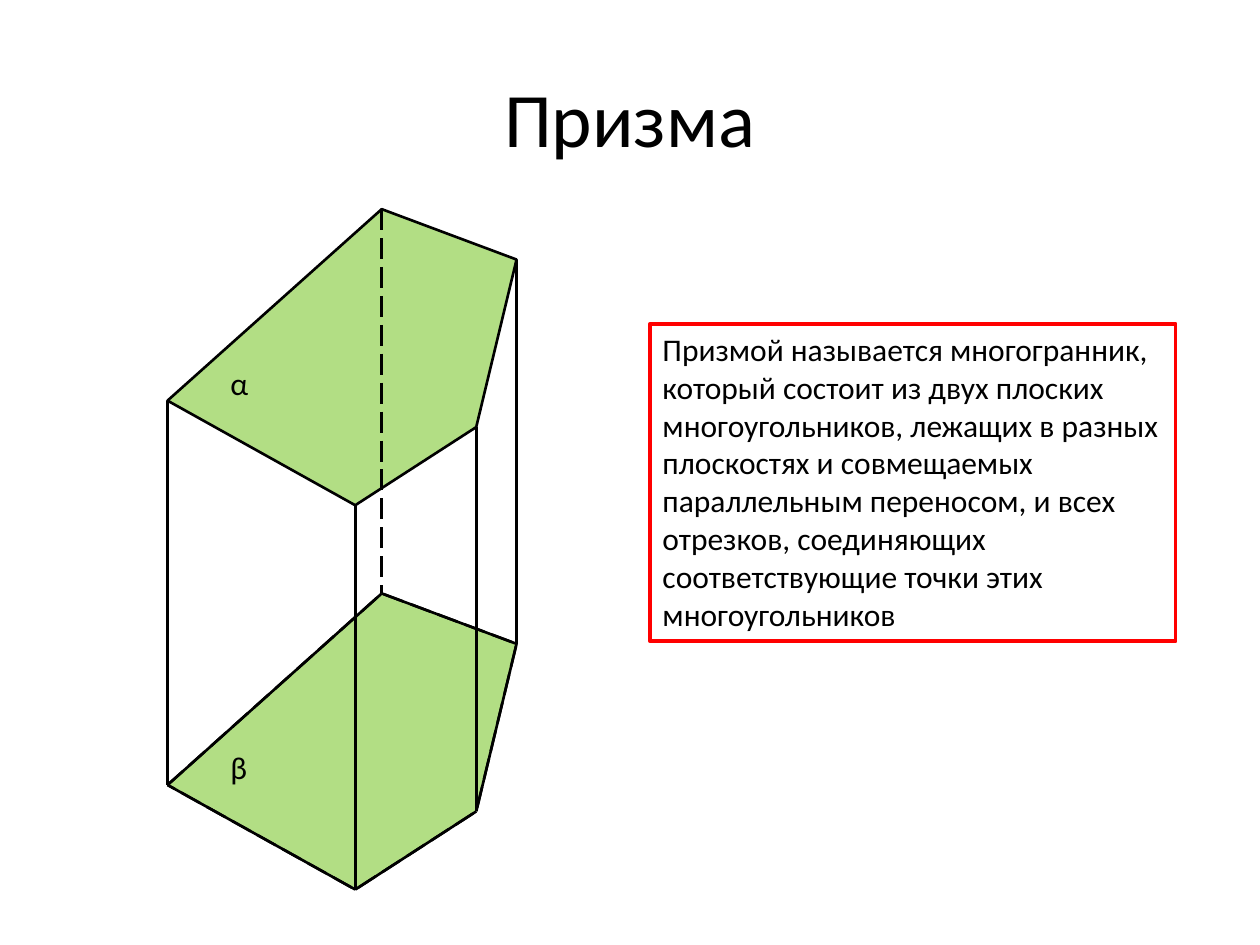
from lxml.etree import SubElement
from pptx import Presentation
from pptx.dml.color import RGBColor
from pptx.enum.dml import MSO_LINE as Dash
from pptx.enum.shapes import MSO_CONNECTOR as Conn, MSO_SHAPE as Form
from pptx.enum.text import MSO_ANCHOR as Anchor, MSO_AUTO_SIZE as Fit, PP_ALIGN as Align
from pptx.oxml.ns import qn
from pptx.util import Inches, Pt

BLACK = RGBColor(0, 0, 0)
GREEN = RGBColor(0x92, 0xD0, 0x50)
RED = RGBColor(0xFF, 0, 0)

RISE = 3.05
TOP = [(1.33, 3.18), (3.03, 1.66), (4.1, 2.06), (3.78, 3.39), (2.82, 4.01)]
BASE = [(x, y + RISE) for x, y in TOP]
BACK = 1
RULE = (
    "Призмой называется многогранник, который состоит из двух плоских "
    "многоугольников, лежащих в разных плоскостях и совмещаемых "
    "параллельным переносом, и всех отрезков, соединяющих "
    "соответствующие точки этих многоугольников"
)


class Sheet:
    def __init__(self, slide, font="Calibri", size=18, width=1.5):
        self.slide = slide
        self.shapes = slide.shapes
        self.font, self.size, self.width = font, size, width

    def letter(self, frame, text, size=None, align=Align.LEFT):
        frame.text = text
        par = frame.paragraphs[0]
        par.alignment = align
        par.font.name = self.font
        par.font.size = Pt(size or self.size)
        par.font.color.rgb = BLACK

    def stroke(self, line, color=BLACK, width=None, dash=None):
        line.color.rgb = color
        line.width = Pt(width or self.width)
        if dash:
            line.dash_style = dash

    def title(self, text):
        box = self.shapes.title
        box.left, box.top = Inches(0.5), Inches(0.3)
        box.width, box.height = Inches(9), Inches(1.25)
        box.text_frame.vertical_anchor = Anchor.MIDDLE
        self.letter(box.text_frame, text, 44, Align.CENTER)

    def face(self, points, dash=None):
        first, *rest = [(Inches(x), Inches(y)) for x, y in points]
        pen = self.shapes.build_freeform(*first)
        pen.add_line_segments(rest, close=True)
        shape = pen.convert_to_shape()
        shape.shadow.inherit = False
        shape.fill.solid()
        shape.fill.fore_color.rgb = GREEN
        tint = shape.element.spPr.find(qn("a:solidFill"))[0]
        SubElement(tint, qn("a:alpha")).set("val", "70000")
        self.stroke(shape.line, dash=dash)

    def edge(self, start, end, dash=None):
        ends = [Inches(v) for v in (*start, *end)]
        line = self.shapes.add_connector(Conn.STRAIGHT, *ends)
        self.stroke(line.line, dash=dash)
        SubElement(line.element.spPr, qn("a:effectLst"))

    def label(self, text, left, top):
        box = self.shapes.add_textbox(
            Inches(left), Inches(top), Inches(0.35), Inches(0.4))
        frame = box.text_frame
        frame.word_wrap = False
        frame.auto_size = Fit.SHAPE_TO_FIT_TEXT
        self.letter(frame, text)

    def panel(self, text, left, top, width, height):
        box = self.shapes.add_shape(
            Form.RECTANGLE, Inches(left), Inches(top), Inches(width), Inches(height))
        box.shadow.inherit = False
        box.fill.background()
        self.stroke(box.line, RED, 2.25)
        frame = box.text_frame
        frame.word_wrap = True
        frame.auto_size = Fit.SHAPE_TO_FIT_TEXT
        frame.vertical_anchor = Anchor.TOP
        self.letter(frame, text)


def main():
    deck = Presentation()
    deck.slide_width, deck.slide_height = Inches(10), Inches(7.5)
    sheet = Sheet(deck.slides.add_slide(deck.slide_layouts[5]))

    sheet.title("Призма")
    sheet.face(BASE, Dash.LONG_DASH)
    sheet.face(TOP)
    for i, (high, low) in enumerate(zip(TOP, BASE)):
        sheet.edge(high, low, Dash.LONG_DASH if i == BACK else None)
    for start, end in zip(BASE, BASE[1:] + BASE[:1]):
        sheet.edge(start, end)
    sheet.label("α", 1.73, 2.84)
    sheet.label("β", 1.73, 2.84 + RISE)
    sheet.panel(RULE, 5.16, 2.57, 4.17, 2.52)

    deck.save("out.pptx")


if __name__ == "__main__":
    main()
